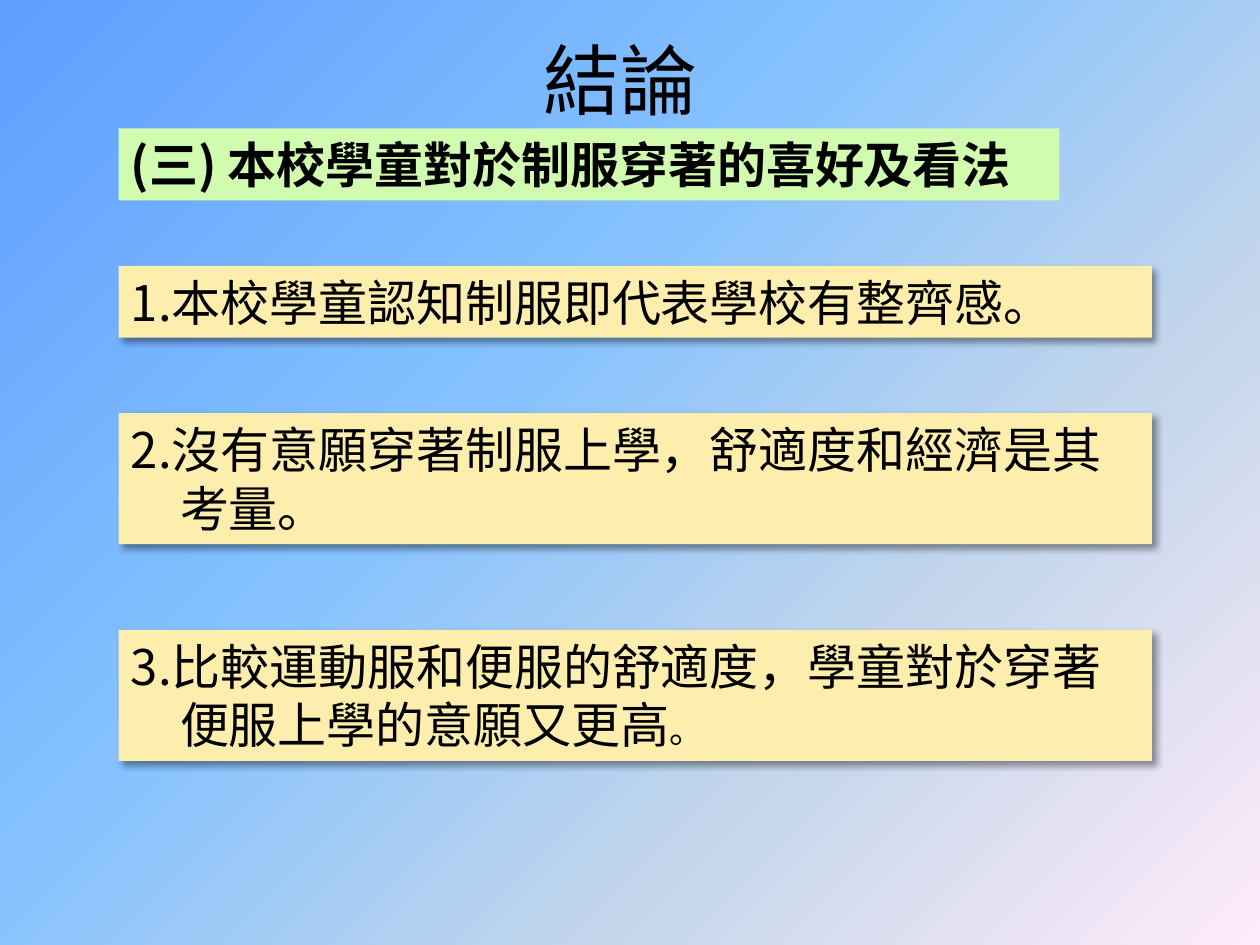
"""Build the conclusion slide on pupils' views of school uniforms."""
from lxml.etree import SubElement
from pptx import Presentation
from pptx.dml.color import RGBColor
from pptx.enum.text import MSO_ANCHOR, MSO_AUTO_SIZE, PP_ALIGN
from pptx.oxml.ns import qn
from pptx.util import Cm, Pt

BLACK = RGBColor(0x00, 0x00, 0x00)
CREAM = RGBColor(0xFD, 0xEE, 0xAD)
GREEN = RGBColor(0xD1, 0xFB, 0xAF)
SKY = (
    (0, RGBColor(0x5E, 0x9E, 0xFF)),
    (40, RGBColor(0x85, 0xC2, 0xFF)),
    (70, RGBColor(0xC4, 0xD6, 0xEB)),
    (100, RGBColor(0xFF, 0xEB, 0xFA)),
)
FONT = "Noto Sans CJK SC"
LEFT, WIDTH = 2.39, 20.83
ONE_LINE, TWO_LINES = 1.45, 2.64
POINTS = (
    (5.36, ONE_LINE, ["1.本校學童認知制服即代表學校有整齊感。"]),
    (8.33, TWO_LINES, ["2.沒有意願穿著制服上學，舒適度和經濟是其", "考量。"]),
    (12.7, TWO_LINES, ["3.比較運動服和便服的舒適度，學童對於穿著", "便服上學的意願又更高"]),
)


class Deck:
    def __init__(self, slide):
        self.slide = slide

    def sky(self, stops):
        fill = self.slide.background.fill
        fill.gradient()
        fill.gradient_angle = 315
        ramp = next(self.slide.element.iter(qn("a:gsLst")))
        for stop in list(ramp):
            ramp.remove(stop)
        for place, color in stops:
            stop = SubElement(ramp, qn("a:gs"), pos=str(place * 1000))
            SubElement(stop, qn("a:srgbClr"), val=str(color))

    def style(self, run, size, bold=False, face=FONT):
        run.font.name = face
        run.font.size = Pt(size)
        run.font.bold = bold
        run.font.color.rgb = BLACK
        SubElement(run.font._element, qn("a:ea"), typeface=FONT)

    def title(self, text):
        shape = self.slide.shapes.title
        shape.left, shape.top = Cm(1.09), Cm(0)
        shape.width, shape.height = Cm(22.86), Cm(3.18)
        frame = shape.text_frame
        frame.text = text
        frame.vertical_anchor = MSO_ANCHOR.MIDDLE
        frame.paragraphs[0].alignment = PP_ALIGN.CENTER
        self.style(frame.paragraphs[0].runs[0], 44)

    def box(self, top, width, height, lines, color, bold=False, wrap=True):
        shape = self.slide.shapes.add_textbox(Cm(LEFT), Cm(top), Cm(width), Cm(height))
        shape.fill.solid()
        shape.fill.fore_color.rgb = color
        frame = shape.text_frame
        frame.text = "\n".join(lines)
        frame.word_wrap = wrap
        frame.auto_size = MSO_AUTO_SIZE.SHAPE_TO_FIT_TEXT
        for part in frame.paragraphs:
            self.style(part.runs[0], 28, bold)
        for part in frame.paragraphs[1:]:
            part._p.get_or_add_pPr().set("marL", str(Cm(0.99)))
        return shape

    def shade(self, shape):
        effects = SubElement(shape._element.spPr, qn("a:effectLst"))
        shadow = SubElement(
            effects, qn("a:outerShdw"), blurRad=str(Pt(4)), dist=str(Pt(3)),
            dir=str(45 * 60000), algn="tl", rotWithShape="0",
        )
        tint = SubElement(shadow, qn("a:srgbClr"), val=str(BLACK))
        SubElement(tint, qn("a:alpha"), val="40000")


def main():
    show = Presentation()
    show.slide_width, show.slide_height = Cm(25.4), Cm(19.05)
    deck = Deck(show.slides.add_slide(show.slide_layouts[5]))
    deck.sky(SKY)
    deck.title("結論")
    deck.box(2.59, 18.97, ONE_LINE, ["(三) 本校學童對於制服穿著的喜好及看法"], GREEN, bold=True, wrap=False)
    for top, height, lines in POINTS:
        shape = deck.box(top, WIDTH, height, lines, CREAM)
        deck.shade(shape)
    stop = shape.text_frame.paragraphs[-1].add_run()
    stop.text = "。"
    deck.style(stop, 20, face="Arial")
    show.save("out.pptx")


if __name__ == "__main__":
    main()
